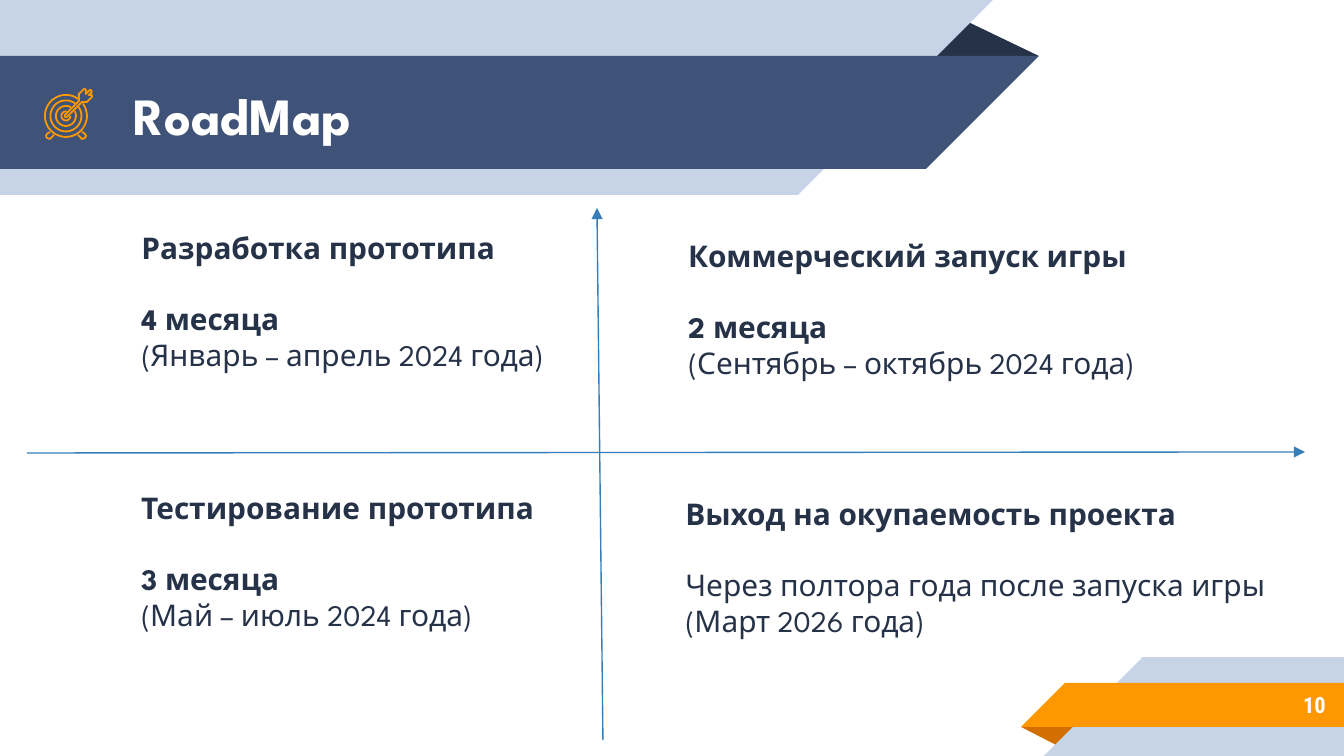
"""Build the RoadMap slide with four project milestones around two axes."""
from math import cos, radians, sin

from lxml.etree import SubElement
from pptx import Presentation
from pptx.dml.color import RGBColor
from pptx.enum.shapes import MSO_CONNECTOR, MSO_SHAPE
from pptx.enum.text import MSO_ANCHOR, MSO_AUTO_SIZE, PP_ALIGN
from pptx.oxml.ns import qn
from pptx.util import Emu, Pt

SCALE = 914400 / 134.4
FINE = 10
NAVY = RGBColor(0x26, 0x32, 0x48)
BLUE = RGBColor(0x3F, 0x53, 0x78)
PALE = RGBColor(0xC7, 0xD3, 0xE6)
ORANGE = RGBColor(0xFF, 0x98, 0x00)
BROWN = RGBColor(0xD2, 0x6F, 0x00)
AXIS = RGBColor(0x36, 0x7E, 0xB9)
WHITE = RGBColor(0xFF, 0xFF, 0xFF)
HEADING_FONT = "League Spartan"
NUMBER_FONT = "Roboto Condensed"

TITLE = ("RoadMap", (120, 58, 773, 113))
PAGE_NUMBER = ("10", (1297, 679, 42, 52))

MILESTONES = [
    ("body", (128, 216, 539, 223), [
        ("Разработка прототипа", True),
        ("4 месяца", True),
        ("(Январь – апрель 2024 года)", False)]),
    ("text", (675, 224, 544, 223), [
        ("Коммерческий запуск игры", True),
        ("2 месяца", True),
        ("(Сентябрь – октябрь 2024 года)", False)]),
    ("text", (128, 476, 539, 223), [
        ("Тестирование прототипа", True),
        ("3 месяца", True),
        ("(Май – июль 2024 года)", False)]),
    ("body", (672, 482, 642, 223), [
        ("Выход на окупаемость проекта", True),
        ("Через полтора года после запуска игры", False),
        ("(Март 2026 года)", False)]),
]

RIBBONS = [
    (NAVY, None, [(925, 56), (962, 19), (1039, 56)]),
    (PALE, (0, 0, 798, 195), [(798, 0), (993, 0), (798, 195)]),
    (BLUE, (0, 56, 926, 113), [(926, 56), (1039, 56), (926, 169)]),
    (BROWN, None, [(1079, 727), (1060, 747), (1021, 727)]),
    (PALE, (1142, 657, 202, 99), [(1143, 756), (1044, 756), (1143, 657)]),
    (ORANGE, (1065, 683, 279, 44), [(1065, 727), (1021, 727), (1065, 683)]),
]

AXES = [((27, 453), (1305, 452)), ((603, 740), (597, 208))]

TARGET_CENTER = (66, 116)
TARGET_RINGS = [(21, 36, 54), (15.5, 36, 54), (4.5, 0, 80), (10, 28, 60)]
TARGET_FOOT = [(50, 132), (47, 134), (46, 136), (47, 138),
               (50, 139), (51, 138), (54, 135)]
TARGET_ARROW = [(92, 95), (89, 95), (92, 92), (91, 90), (90, 90), (86, 94),
                (86, 90), (85, 89), (84, 89), (79, 94), (79, 101), (65, 115),
                (65, 117), (67, 117), (82, 102), (87, 102), (92, 97)]


def px(value):
    return Emu(round(value * SCALE))


def place(box, frame):
    box.left, box.top, box.width, box.height = map(px, frame)


def paint(shape, color):
    shape.shadow.inherit = False
    shape.fill.solid()
    shape.fill.fore_color.rgb = color
    shape.line.fill.background()


def outline(shape):
    shape.shadow.inherit = False
    shape.fill.background()
    shape.line.color.rgb = ORANGE
    shape.line.width = Pt(0.96)


def add_outline(page, points, close):
    fine_points = [(x * FINE, y * FINE) for x, y in points]
    builder = page.shapes.build_freeform(*fine_points[0], scale=SCALE / FINE)
    builder.add_line_segments(fine_points[1:], close=close)
    return builder.convert_to_shape()


def add_ribbons(page):
    for color, bar, corner in RIBBONS:
        if bar:
            paint(page.shapes.add_shape(MSO_SHAPE.RECTANGLE, *map(px, bar)), color)
        paint(add_outline(page, corner, True), color)


def add_target(page):
    center_x, center_y = TARGET_CENTER
    for radius, gap_start, gap_end in TARGET_RINGS:
        sweep = 360 - gap_end + gap_start
        angles = [radians(gap_end + sweep * step / 48) for step in range(49)]
        arc = [(center_x + radius * cos(angle), center_y - radius * sin(angle))
               for angle in angles]
        outline(add_outline(page, arc, False))
    mirrored_foot = [(2 * center_x - x, y) for x, y in TARGET_FOOT]
    for foot in (TARGET_FOOT, mirrored_foot):
        outline(add_outline(page, foot, False))
    outline(add_outline(page, TARGET_ARROW, True))


def add_axes(page):
    for start, end in AXES:
        axis = page.shapes.add_connector(
            MSO_CONNECTOR.STRAIGHT, *map(px, start + end))
        axis.line.color.rgb = AXIS
        axis.line.width = Pt(0.75)
        line = axis.line._get_or_add_ln()
        SubElement(line, qn("a:tailEnd"), type="triangle")
        SubElement(axis.element.spPr, qn("a:effectLst"))


def prepare(box, anchor):
    frame = box.text_frame
    frame.word_wrap = True
    frame.auto_size = MSO_AUTO_SIZE.NONE
    frame.vertical_anchor = anchor
    frame.margin_left = frame.margin_right = px(13.44)
    frame.margin_top = frame.margin_bottom = px(13.44)
    return frame


def style(paragraph, font_name, size, color, bold, alignment=PP_ALIGN.LEFT):
    paragraph.alignment = alignment
    for span in paragraph.runs:
        span.font.name = font_name
        span.font.size = Pt(size)
        span.font.color.rgb = color
        span.font.bold = bold


def fill_milestone(box, lines):
    frame = prepare(box, MSO_ANCHOR.TOP)
    frame.text = "\n".join(text for text, bold in lines)
    for index, (paragraph, (text, bold)) in enumerate(zip(frame.paragraphs, lines)):
        style(paragraph, HEADING_FONT, 16, NAVY, bold)
        paragraph.space_before = Pt(19 if index == 1 else 0)
        properties = paragraph._p.get_or_add_pPr()
        properties.set("marL", "0")
        properties.set("indent", "0")
        SubElement(properties, qn("a:buNone"))


def main():
    deck = Presentation()
    deck.slide_width, deck.slide_height = px(1344), px(756)
    page = deck.slides.add_slide(deck.slide_layouts[3])
    add_ribbons(page)

    title = page.shapes.title
    tree = title.element.getparent()
    tree.append(title.element)
    text, frame = TITLE
    place(title, frame)
    prepare(title, MSO_ANCHOR.MIDDLE).text = text
    style(title.text_frame.paragraphs[0], HEADING_FONT, 28, WHITE, True)

    bodies = iter([page.placeholders[1], page.placeholders[2]])
    for kind, frame, lines in MILESTONES:
        if kind == "body":
            box = next(bodies)
            tree.append(box.element)
            place(box, frame)
        else:
            box = page.shapes.add_textbox(*map(px, frame))
        fill_milestone(box, lines)

    text, frame = PAGE_NUMBER
    number = page.shapes.add_textbox(*map(px, frame))
    prepare(number, MSO_ANCHOR.MIDDLE).text = text
    number.text_frame.word_wrap = False
    style(number.text_frame.paragraphs[0], NUMBER_FONT, 12, WHITE, True, PP_ALIGN.RIGHT)

    add_target(page)
    add_axes(page)
    deck.save("out.pptx")


if __name__ == "__main__":
    main()
